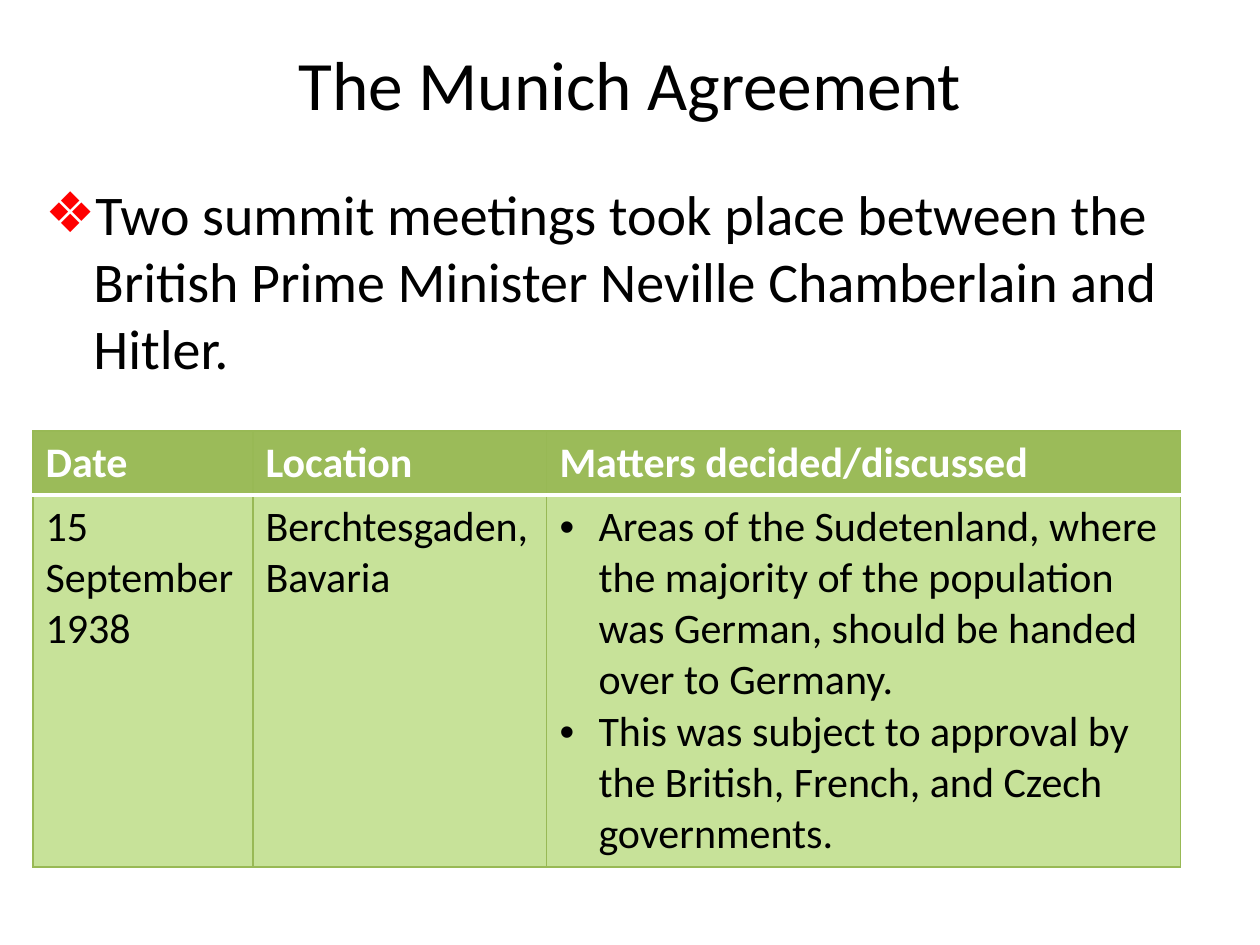
import pptx
import pptx.dml.color
import pptx.enum.text
import pptx.oxml
import pptx.oxml.ns
import pptx.util

PX = 914400 / 126
BLACK = pptx.dml.color.RGBColor(0x00, 0x00, 0x00)
WHITE = pptx.dml.color.RGBColor(0xFF, 0xFF, 0xFF)
RED = pptx.dml.color.RGBColor(0xFF, 0x00, 0x00)
GREEN = pptx.dml.color.RGBColor(0x9B, 0xBB, 0x59)
LIGHT_GREEN = pptx.dml.color.RGBColor(0xC7, 0xE2, 0x99)
BORDER_GREEN = pptx.dml.color.RGBColor(0x98, 0xB9, 0x55)
NS = pptx.oxml.ns.nsdecls("a")
ALIGN = pptx.enum.text.PP_ALIGN
ANCHOR = pptx.enum.text.MSO_ANCHOR


def px(*lengths):
    return [pptx.util.Emu(round(length * PX)) for length in lengths]


def write(frame, text, size=24, color=BLACK, bold=False, align=ALIGN.LEFT,
          anchor=ANCHOR.TOP, before=0, bullet=None, bullet_color=BLACK, indent=0):
    """Fill a text frame; each line of text becomes a paragraph."""
    frame.text = text
    frame.word_wrap = True
    frame.vertical_anchor = anchor
    for paragraph in frame.paragraphs:
        paragraph.alignment = align
        paragraph.space_before = pptx.util.Pt(before)
        font = paragraph.runs[0].font
        font.name, font.size, font.bold = "Calibri", pptx.util.Pt(size), bold
        font.color.rgb = color
        if bullet:
            properties = paragraph._p.get_or_add_pPr()
            margin = px(indent)[0]
            properties.set("marL", str(margin))
            properties.set("indent", str(-margin))
            for xml in (f'<a:buClr {NS}><a:srgbClr val="{bullet_color}"/></a:buClr>',
                        f'<a:buFont {NS} typeface="Arial"/>',
                        f'<a:buChar {NS} char="{bullet}"/>'):
                properties.append(pptx.oxml.parse_xml(xml))


presentation = pptx.Presentation()
presentation.slide_width, presentation.slide_height = px(1260, 945)
slide = presentation.slides.add_slide(presentation.slide_layouts[5])

# Title
title = slide.shapes.title
title.left, title.top, title.width, title.height = px(63, 30, 1134, 105)
write(title.text_frame, "The Munich Agreement", size=39.6,
      align=ALIGN.CENTER, anchor=ANCHOR.MIDDLE)
title.text_frame.auto_size = pptx.enum.text.MSO_AUTO_SIZE.NONE

# Introduction
introduction = slide.shapes.add_textbox(*px(33, 173, 1200, 218))
write(introduction.text_frame,
      "Two summit meetings took place between the British Prime Minister "
      "Neville Chamberlain and Hitler.",
      size=32, before=6.4, bullet="❖", bullet_color=RED, indent=48)

# Table of meetings
rows = [
    ["Date", "Location", "Matters decided/discussed"],
    ["15 September 1938", "Berchtesgaden, Bavaria",
     "Areas of the Sudetenland, where the majority of the population was German, "
     "should be handed over to Germany.\n"
     "This was subject to approval by the British, French, and Czech governments."],
]
meetings = slide.shapes.add_table(2, 3, *px(33, 431, 1148, 436)).table
meetings.first_row = meetings.horz_banding = False
for column, width in zip(meetings.columns, px(220, 294, 634)):
    column.width = width
for row, height in zip(meetings.rows, px(64, 372)):
    row.height = height

for r, texts in enumerate(rows):
    header = r == 0
    for c, text in enumerate(texts):
        cell = meetings.cell(r, c)
        cell.fill.solid()
        cell.fill.fore_color.rgb = GREEN if header else LIGHT_GREEN
        write(cell.text_frame, text, color=WHITE if header else BLACK, bold=header,
              bullet="•" if not header and c == 2 else None, indent=39)
        cell.vertical_anchor = ANCHOR.MIDDLE if header else ANCHOR.TOP

        # Green borders, with a white rule under the header
        for position, side in enumerate("LRTB"):
            rule = side == ("B" if header else "T")
            color, points = (WHITE, 2) if rule else (BORDER_GREEN, 0.75)
            cell._tc.get_or_add_tcPr().insert(position, pptx.oxml.parse_xml(
                f'<a:ln{side} {NS} w="{pptx.util.Pt(points)}"><a:solidFill>'
                f'<a:srgbClr val="{color}"/></a:solidFill></a:ln{side}>'))

presentation.save("out.pptx")
